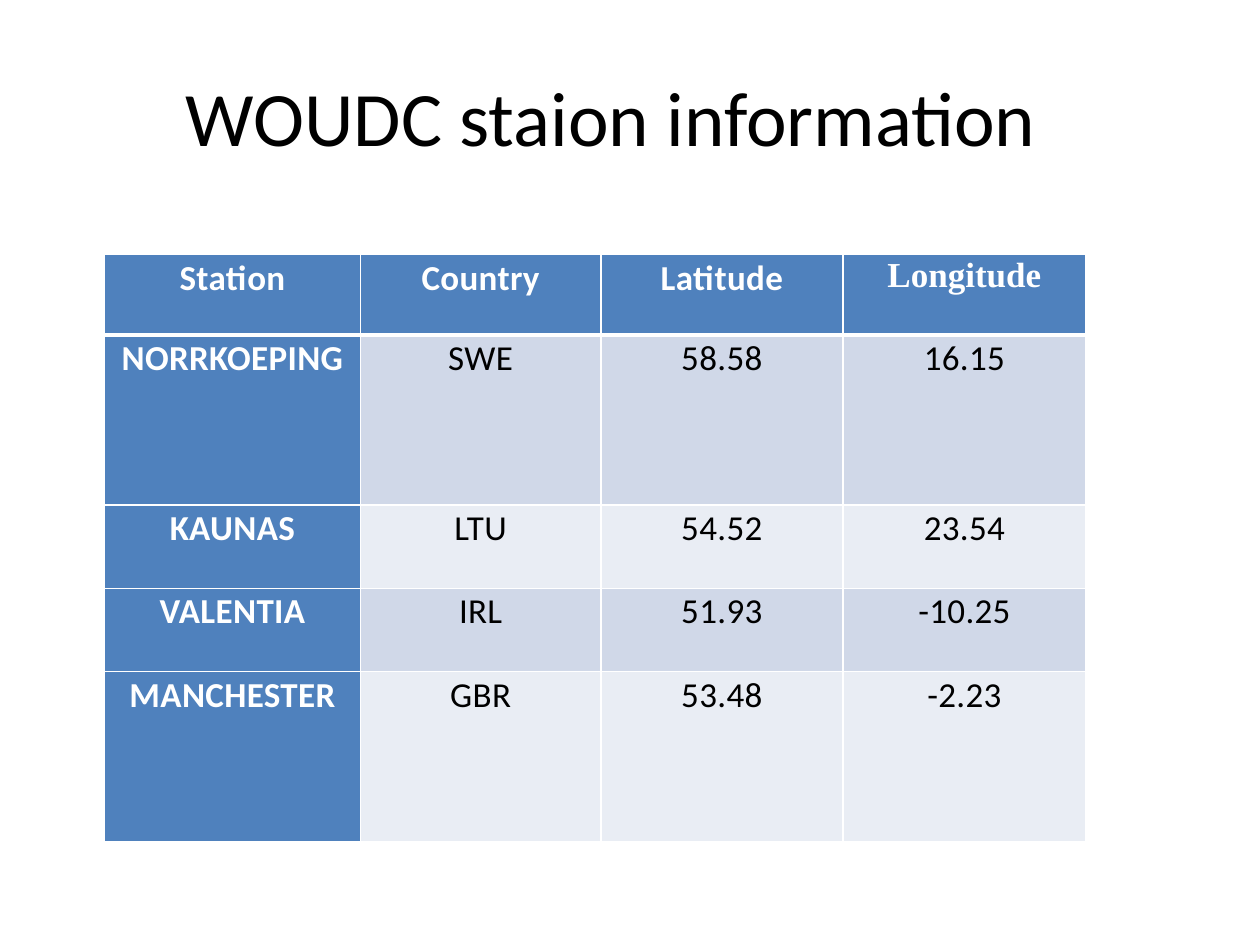
"""Build the station information slide."""
import dataclasses

import pptx
import pptx.dml.color
import pptx.enum.text
import pptx.oxml
import pptx.oxml.ns
import pptx.util

WIDTH, HEIGHT = 10, 7.5
BLUE, WHITE, BLACK = "4F81BD", "FFFFFF", "000000"
BANDS = ("D0D8E8", "E9EDF4")
COLUMNS = (2.03, 1.91, 1.92, 1.93)
ROW_HEIGHTS = (0.64, 1.35, 0.66, 0.66, 1.35)
HEADINGS = ("Station", "Country", "Latitude", "Longitude")


@dataclasses.dataclass(frozen=True)
class Station:
    """One measuring station, in column order."""
    name: str
    country: str
    latitude: str
    longitude: str


@dataclasses.dataclass(frozen=True)
class CellStyle:
    """Look of one table cell."""
    fill: str
    color: str
    bold: bool
    font: str = "Calibri"
    spacing: int = 20
    bottom: float = 1


STATIONS = (
    Station("NORRKOEPING", "SWE", "58.58", "16.15"),
    Station("KAUNAS", "LTU", "54.52", "23.54"),
    Station("VALENTIA", "IRL", "51.93", "-10.25"),
    Station("MANCHESTER", "GBR", "53.48", "-2.23"),
)


def rgb(value: str) -> pptx.dml.color.RGBColor:
    """Turn a hex string into a colour."""
    return pptx.dml.color.RGBColor.from_string(value)


def add_run(p, text: str, size: float, font: str, color: str, bold: bool = False):
    """Add a formatted run to a centred paragraph."""
    p.alignment = pptx.enum.text.PP_ALIGN.CENTER
    r = p.add_run()
    r.text = text
    r.font.size = pptx.util.Pt(size)
    r.font.name = font
    r.font.bold = bold
    r.font.color.rgb = rgb(color)
    return r


def add_border(cell, side: str, width: float) -> None:
    """Draw a white line along one side of a cell."""
    cell._tc.get_or_add_tcPr().append(pptx.oxml.parse_xml(
        f'<a:ln{side} {pptx.oxml.ns.nsdecls("a")} w="{pptx.util.Pt(width)}">'
        f'<a:solidFill><a:srgbClr val="{WHITE}"/></a:solidFill></a:ln{side}>'))


def style_at(row: int, col: int) -> CellStyle:
    """Choose the style from the place in the table."""
    if row == 0:
        if HEADINGS[col] == "Longitude":
            return CellStyle(BLUE, WHITE, True, "Times New Roman", 0, 3)
        return CellStyle(BLUE, WHITE, True, bottom=3)
    if col == 0:
        return CellStyle(BLUE, WHITE, True)
    return CellStyle(BANDS[(row - 1) % 2], BLACK, False)


def fill_cell(cell, text: str, style: CellStyle, top: float) -> None:
    """Write and format one table cell."""
    cell.margin_left = cell.margin_right = pptx.util.Inches(0.07)
    cell.margin_top = cell.margin_bottom = 0
    for side, width in (("L", 1), ("R", 1), ("T", top), ("B", style.bottom)):
        add_border(cell, side, width)
    cell.fill.solid()
    cell.fill.fore_color.rgb = rgb(style.fill)
    p = cell.text_frame.paragraphs[0]
    p.line_spacing = 1.05
    p.space_after = pptx.util.Pt(12)
    r = add_run(p, text, 20, style.font, style.color, style.bold)
    r.font._element.set("spc", str(style.spacing))


def add_title(s, text: str) -> None:
    """Place and write the slide title."""
    sp = s.shapes.title
    sp.left, sp.top = pptx.util.Inches(0.035 * WIDTH), pptx.util.Inches(0.29)
    sp.width, sp.height = pptx.util.Inches(0.9 * WIDTH), pptx.util.Inches(HEIGHT / 6)
    tf = sp.text_frame
    tf.vertical_anchor = pptx.enum.text.MSO_ANCHOR.MIDDLE
    add_run(tf.paragraphs[0], text, 44, "Calibri", BLACK)


def add_station_table(s) -> None:
    """Add the table with its heading row and stations."""
    rows = [HEADINGS, *map(dataclasses.astuple, STATIONS)]
    table = s.shapes.add_table(
        len(rows), len(COLUMNS), pptx.util.Inches(0.83), pptx.util.Inches(2.02),
        pptx.util.Inches(sum(COLUMNS)), pptx.util.Inches(sum(ROW_HEIGHTS))).table
    table.first_col = True
    for column, width in zip(table.columns, COLUMNS):
        column.width = pptx.util.Inches(width)
    for i, (values, height) in enumerate(zip(rows, ROW_HEIGHTS)):
        table.rows[i].height = pptx.util.Inches(height)
        for j, text in enumerate(values):
            fill_cell(table.cell(i, j), text, style_at(i, j), 3 if i == 1 else 1)


def main() -> None:
    """Build and save the presentation."""
    prs = pptx.Presentation()
    prs.slide_width = pptx.util.Inches(WIDTH)
    prs.slide_height = pptx.util.Inches(HEIGHT)
    s = prs.slides.add_slide(prs.slide_layouts.get_by_name("Title Only"))
    add_title(s, "WOUDC staion information")
    add_station_table(s)
    prs.save("out.pptx")


if __name__ == "__main__":
    main()
